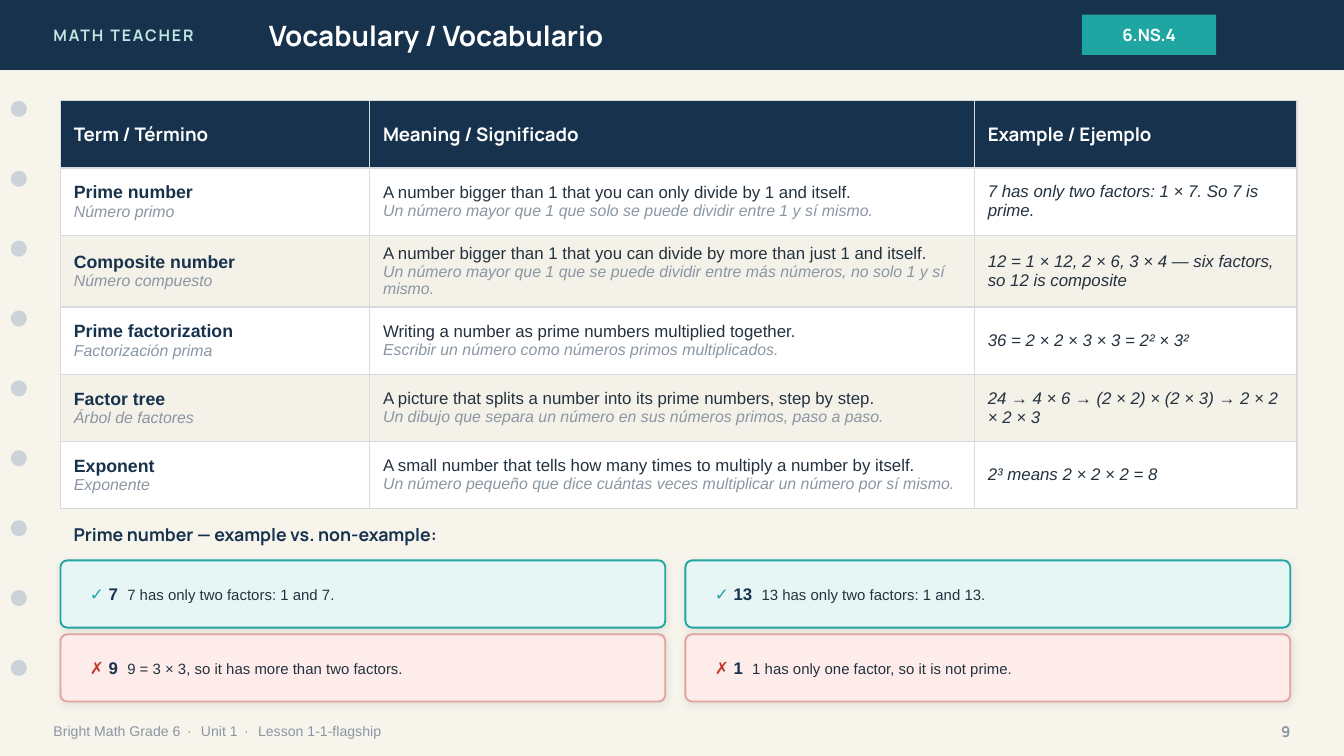
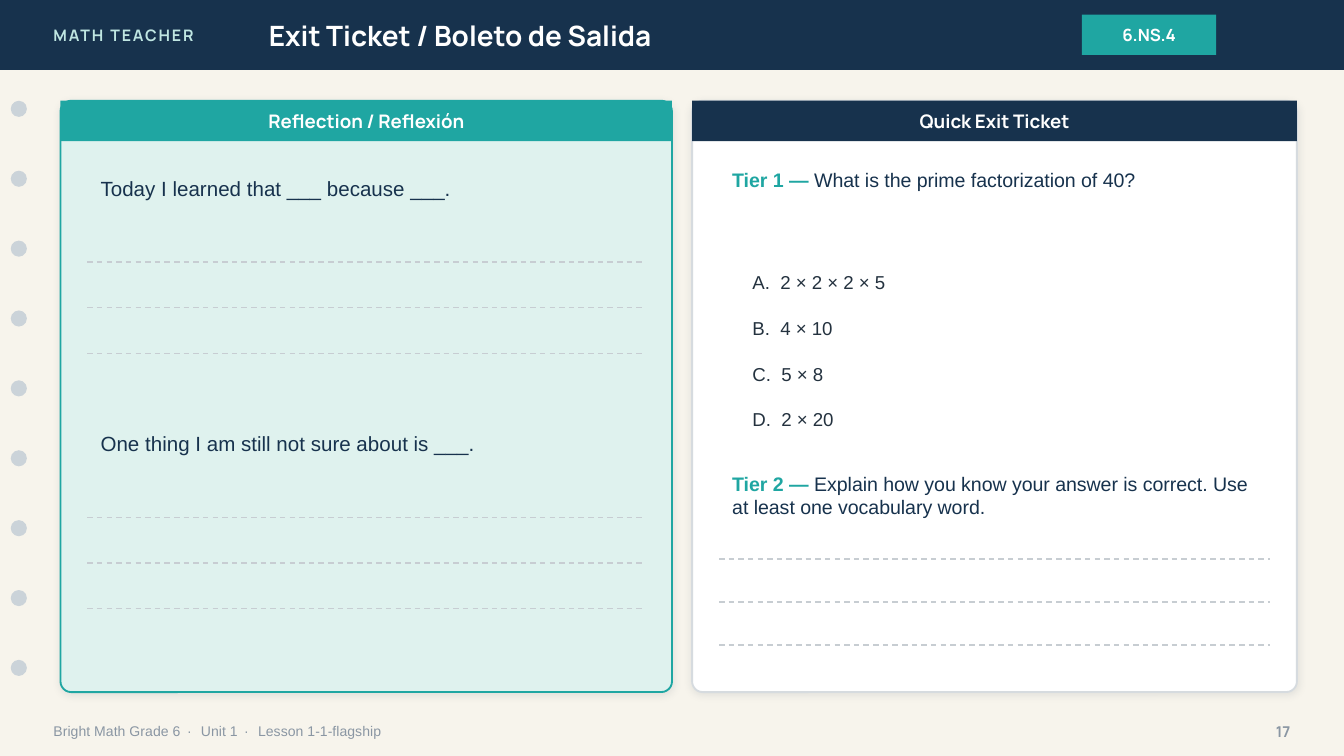
from dataclasses import dataclass

from lxml import etree
from pptx import Presentation, util as u
from pptx.dml.color import RGBColor
from pptx.enum import dml, shapes, text
from pptx.oxml.ns import qn


@dataclass(frozen=True)
class Theme:
    head: str = "Manrope"
    body: str = "Arial"
    page: str = "F7F4EC"
    navy: str = "17324D"
    teal: str = "1FA6A2"
    white: str = "FFFFFF"
    ink: str = "24323F"
    grey: str = "8A96A3"
    brand: str = "BFE6E2"
    hole: str = "CBD3D9"
    border: str = "D6DBDF"
    rule: str = "C7CDD2"
    band: str = "F4F1E8"
    mint: str = "DFF2EE"
    shadow: str = "1C2E42"
    title_size: float = 15
    prompt_size: float = 11
    tier_size: float = 10.5
    heading_size: float = 10
    label_size: float = 9.5
    text_size: float = 9
    small_size: float = 8.5
    note_size: float = 8
    footer_size: float = 7.5


T = Theme()
WIDTH, HEIGHT = 10, 10 * 9 / 16
BAR = 0.52
LEFT, TOP, CONTENT_W = 0.45, 0.75, 9.2
GUTTER = 0.15
MID, CENTER = text.MSO_ANCHOR.MIDDLE, text.PP_ALIGN.CENTER
RECT, ROUND = shapes.MSO_SHAPE.RECTANGLE, shapes.MSO_SHAPE.ROUNDED_RECTANGLE

BRAND, STANDARD = "MATH TEACHER", "6.NS.4"
FOOTER = ("Bright Math Grade 6", "Unit 1", "Lesson 1-1-flagship")

VOCABULARY_COLUMNS = (("Term / Término", 2.3), ("Meaning / Significado", 4.5),
                      ("Example / Ejemplo", 2.4))
VOCABULARY = [
    ("Prime number", "Número primo",
     "A number bigger than 1 that you can only divide by 1 and itself.",
     "Un número mayor que 1 que solo se puede dividir entre 1 y sí mismo.",
     "7 has only two factors: 1 × 7. So 7 is prime."),
    ("Composite number", "Número compuesto",
     "A number bigger than 1 that you can divide by more than just 1 and itself.",
     "Un número mayor que 1 que se puede dividir entre más números, no solo 1 y sí mismo.",
     "12 = 1 × 12, 2 × 6, 3 × 4 — six factors, so 12 is composite"),
    ("Prime factorization", "Factorización prima",
     "Writing a number as prime numbers multiplied together.",
     "Escribir un número como números primos multiplicados.",
     "36 = 2 × 2 × 3 × 3 = 2² × 3²"),
    ("Factor tree", "Árbol de factores",
     "A picture that splits a number into its prime numbers, step by step.",
     "Un dibujo que separa un número en sus números primos, paso a paso.",
     "24 → 4 × 6 → (2 × 2) × (2 × 3) → 2 × 2 × 2 × 3"),
    ("Exponent", "Exponente",
     "A small number that tells how many times to multiply a number by itself.",
     "Un número pequeño que dice cuántas veces multiplicar un número por sí mismo.",
     "2³ means 2 × 2 × 2 = 8"),
]
COMPARISON = "Prime number — example vs. non-example:"
# mark, mark colour, fill, outline, cards in the row
COMPARISON_ROWS = [
    ("✓", T.teal, "E7F6F4", T.teal,
     [("7", "7 has only two factors: 1 and 7."),
      ("13", "13 has only two factors: 1 and 13.")]),
    ("✗", "C0392B", "FDECEA", "E2A39B",
     [("9", "9 = 3 × 3, so it has more than two factors."),
      ("1", "1 has only one factor, so it is not prime.")]),
]
PROMPTS = ["Today I learned that ___ because ___.",
           "One thing I am still not sure about is ___."]
CHOICES = ["2 × 2 × 2 × 5", "4 × 10", "5 × 8", "2 × 20"]
# label, question, top, height
TIERS = [("Tier 1 — ", "What is the prime factorization of 40?", 1.2, 0.7),
         ("Tier 2 — ", "Explain how you know your answer is correct. "
          "Use at least one vocabulary word.", 3.46, 0.55)]


def rgb(color):
    return RGBColor.from_string(color)


def inches(*lengths):
    return [u.Inches(n) for n in lengths]


def write(frame, *paragraphs, align=text.PP_ALIGN.LEFT, **base):
    """Fill a frame; a paragraph is a string or a list of (string, format) runs."""
    frame.word_wrap = True
    for i, runs in enumerate(paragraphs):
        paragraph = frame.add_paragraph() if i else frame.paragraphs[0]
        paragraph.alignment = align
        for words, changes in [(runs, {})] if isinstance(runs, str) else runs:
            style = base | changes
            run = paragraph.add_run()
            run.text = words
            font = run.font
            font.size = u.Pt(style["size"])
            font.name = style.get("face", T.body)
            font.color.rgb = rgb(style["color"])
            font.bold = style.get("bold", False)
            font.italic = style.get("italic", False)
            if "spacing" in style:
                run._r.get_or_add_rPr().set("spc", str(round(style["spacing"] * 100)))


def heading(frame, words, size, color=T.white, **style):
    write(frame, words, size=size, color=color, face=T.head, bold=True, **style)


def add_text(slide, x, y, w, h, anchor=MID):
    frame = slide.shapes.add_textbox(*inches(x, y, w, h)).text_frame
    frame.vertical_anchor = anchor
    return frame


def add_box(slide, x, y, w, h, fill, kind=RECT):
    box = slide.shapes.add_shape(kind, *inches(x, y, w, h))
    box.shadow.inherit = False
    box.fill.solid()
    box.fill.fore_color.rgb = rgb(fill)
    box.line.fill.background()
    box.text_frame.vertical_anchor = MID
    return box


def add_card(slide, x, y, w, h, fill, outline, rounding):
    card = add_box(slide, x, y, w, h, fill, ROUND)
    card.adjustments[0] = rounding
    card.line.color.rgb = rgb(outline)
    card.line.width = u.Pt(1)
    effects = card._element.spPr.find(qn("a:effectLst"))
    shadow = etree.SubElement(effects, qn("a:outerShdw"), blurRad=str(u.Pt(4)),
                              dist=str(u.Pt(1)), dir="5400000", rotWithShape="0")
    color = etree.SubElement(shadow, qn("a:srgbClr"), val=T.shadow)
    etree.SubElement(color, qn("a:alpha"), val="10000")


def add_writing_lines(slide, x, y, w, pitch, count=3):
    for i in range(count):
        level = y + i * pitch
        rule = slide.shapes.add_connector(shapes.MSO_CONNECTOR.STRAIGHT,
                                          *inches(x, level, x + w, level))
        rule.line.color.rgb = rgb(T.rule)
        rule.line.width = u.Pt(0.75)
        rule.line.dash_style = dml.MSO_LINE.DASH
        etree.SubElement(rule._element.spPr, qn("a:effectLst"))


def add_page(deck, title, number):
    slide = deck.slides.add_slide(deck.slide_layouts[5])
    slide.background.fill.solid()
    slide.background.fill.fore_color.rgb = rgb(T.page)
    add_box(slide, 0, 0, WIDTH, BAR, T.navy)
    heading(add_text(slide, 0.3, 0, 2.4, BAR), BRAND, T.small_size, T.brand, spacing=1)

    holder = slide.shapes.title
    holder.left, holder.top, holder.width, holder.height = inches(1.9, 0, 5.6, BAR)
    holder._element.getparent().append(holder._element)  # in front of the bar
    holder.text_frame.auto_size = text.MSO_AUTO_SIZE.NONE
    holder.text_frame.vertical_anchor = MID
    heading(holder.text_frame, title, T.title_size)

    badge = add_box(slide, 8.05, 0.11, 1, 0.3, T.teal)
    heading(badge.text_frame, STANDARD, T.text_size, align=CENTER)
    for i in range(9):
        add_box(slide, 0.08, TOP + i * BAR, 0.12, 0.12, T.hole, shapes.MSO_SHAPE.OVAL)

    course = [(FOOTER[0], {})]
    for part in FOOTER[1:]:
        course += [(" · ", {"spacing": 1.4}), (part, {})]
    write(add_text(slide, 0.3, 5.3, 7, 0.28), course, size=T.footer_size, color=T.grey)
    heading(add_text(slide, 9.2, 5.3, 0.5, 0.28), str(number), T.note_size, T.grey,
            align=text.PP_ALIGN.RIGHT)
    return slide


def style_cell(cell, fill):
    cell.vertical_anchor = MID
    properties = cell._tc.get_or_add_tcPr()
    for side in ("lnL", "lnR", "lnT", "lnB"):
        edge = etree.SubElement(properties, qn("a:" + side), w=str(u.Pt(0.75)))
        solid = etree.SubElement(edge, qn("a:solidFill"))
        etree.SubElement(solid, qn("a:srgbClr"), val=T.border)
    cell.fill.solid()
    cell.fill.fore_color.rgb = rgb(fill)


def add_vocabulary_table(slide):
    rows = len(VOCABULARY) + 1
    table = slide.shapes.add_table(rows, len(VOCABULARY_COLUMNS),
                                   *inches(LEFT, TOP, CONTENT_W, rows * 0.5)).table
    table.horz_banding = False
    for column, (name, width) in enumerate(VOCABULARY_COLUMNS):
        table.columns[column].width = u.Inches(width)
        style_cell(table.cell(0, column), T.navy)
        heading(table.cell(0, column).text_frame, name, T.heading_size)
    translated = dict(size=T.small_size, color=T.grey, bold=False, italic=True)
    for r, (term, término, meaning, significado, example) in enumerate(VOCABULARY, 1):
        cells = [table.cell(r, column) for column in range(len(VOCABULARY_COLUMNS))]
        for cell in cells:
            style_cell(cell, T.white if r % 2 else T.band)
        write(cells[0].text_frame, term, [(término, translated)],
              size=T.label_size, color=T.navy, bold=True)
        write(cells[1].text_frame, meaning, [(significado, translated)],
              size=T.text_size, color=T.ink)
        write(cells[2].text_frame, example, size=T.text_size, color=T.ink, italic=True)


def build_vocabulary(deck):
    slide = add_page(deck, "Vocabulary / Vocabulario", 9)
    add_vocabulary_table(slide)
    heading(add_text(slide, LEFT, 3.85, CONTENT_W, 0.26), COMPARISON, T.label_size, T.navy)
    w, h, pad = 4.5, 0.5, 0.12
    for r, (mark, mark_color, fill, outline, cards) in enumerate(COMPARISON_ROWS):
        y = 4.17 + r * (h + 0.05)
        for c, (number, reason) in enumerate(cards):
            x = LEFT + c * (w + GUTTER)
            add_card(slide, x, y, w, h, fill, outline, 0.1)
            write(add_text(slide, x + pad, y, w - 2 * pad, h),
                  [(mark + " ", {"color": mark_color}), (number, {}),
                   (" ", {"spacing": 2.5}),
                   (reason, {"size": T.note_size, "color": T.ink, "bold": False})],
                  size=T.text_size, color=T.navy, bold=True)


def add_panel(slide, x, w, name, fill, outline, banner):
    add_card(slide, x, TOP, w, 4.4, fill, outline, 0.018)
    strip = add_box(slide, x, TOP, w, 0.3, banner)
    heading(strip.text_frame, name, T.heading_size, align=CENTER)


def build_exit_ticket(deck):
    slide = add_page(deck, "Exit Ticket / Boleto de Salida", 17)
    pad, pitch = 0.2, 0.34
    reflect_w, ticket_w = 4.55, 4.5
    ticket_x = LEFT + reflect_w + GUTTER

    add_panel(slide, LEFT, reflect_w, "Reflection / Reflexión", T.mint, T.teal, T.teal)
    x, w = LEFT + pad, reflect_w - 2 * pad
    for i, prompt in enumerate(PROMPTS):
        y = 1.2 + i * 1.9
        write(add_text(slide, x, y, w, 0.4), prompt, size=T.prompt_size, color=T.navy)
        add_writing_lines(slide, x, y + 0.75, w, pitch)

    add_panel(slide, ticket_x, ticket_w, "Quick Exit Ticket", T.white, T.border, T.navy)
    x, w = ticket_x + pad, ticket_w - 2 * pad
    for label, question, y, h in TIERS:
        write(add_text(slide, x, y, w, h, text.MSO_ANCHOR.TOP),
              [(label, {"color": T.teal, "bold": True}), (question, {})],
              size=T.tier_size, color=T.navy)
    for i, (letter, choice) in enumerate(zip("ABCD", CHOICES)):
        write(add_text(slide, x + 0.15, 1.95 + i * pitch, w - 0.2, 0.3),
              [(letter + ".", {}), (" ", {"spacing": 2.8}), (choice, {})],
              size=T.heading_size, color=T.ink)
    add_writing_lines(slide, x, 4.16, w, 0.32)


def main():
    deck = Presentation()
    deck.slide_width, deck.slide_height = inches(WIDTH, HEIGHT)
    build_vocabulary(deck)
    build_exit_ticket(deck)
    deck.save("out.pptx")


if __name__ == "__main__":
    main()
